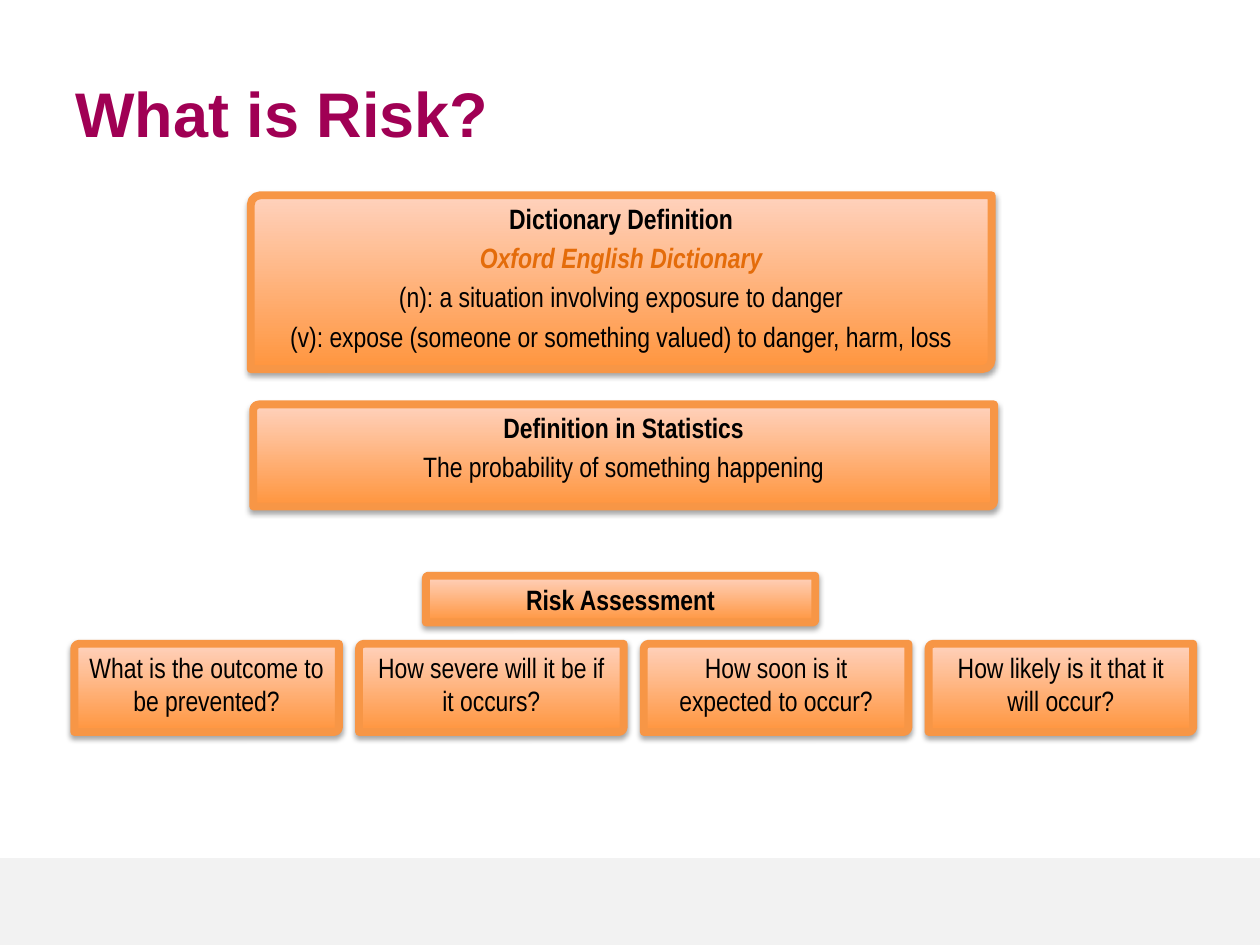
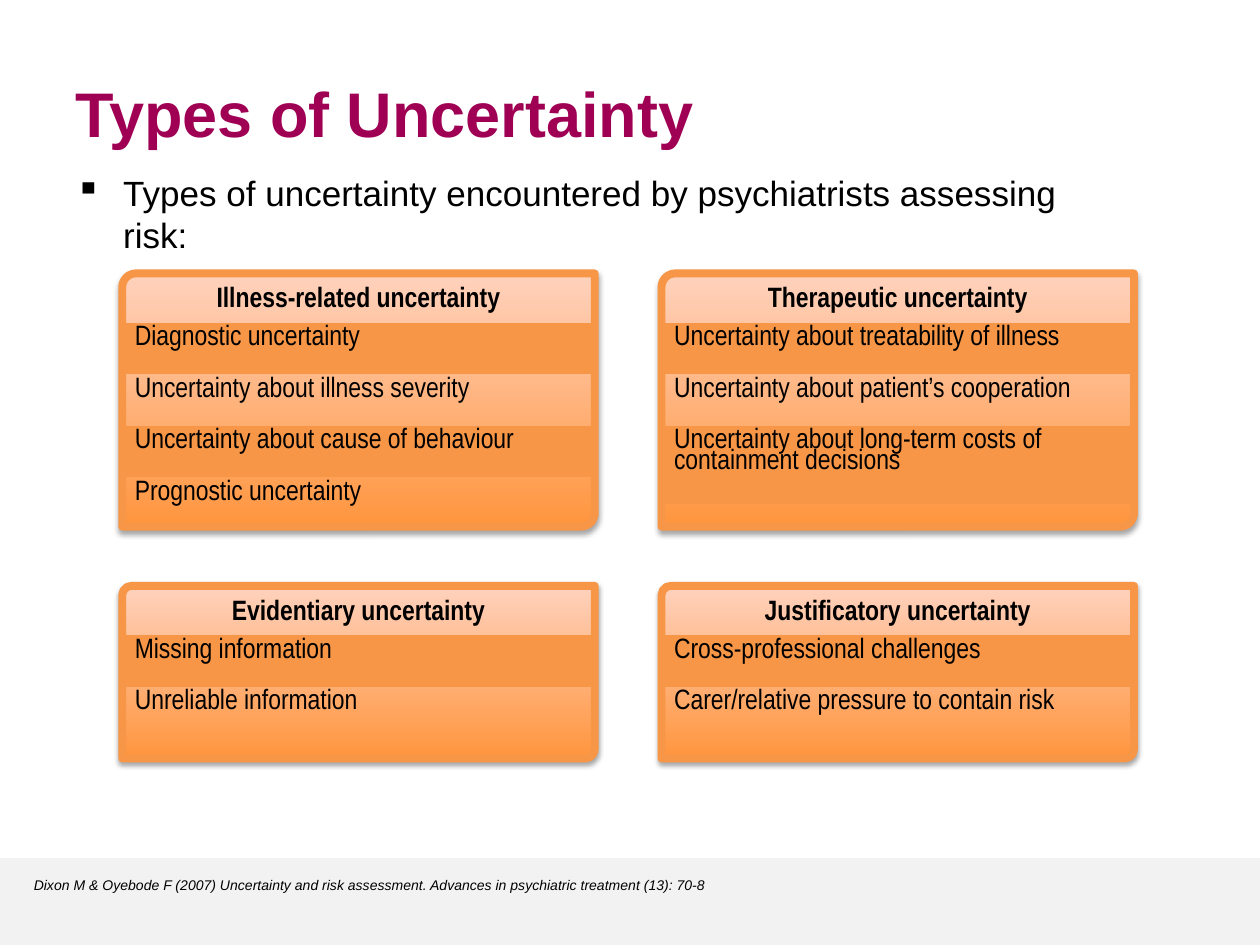
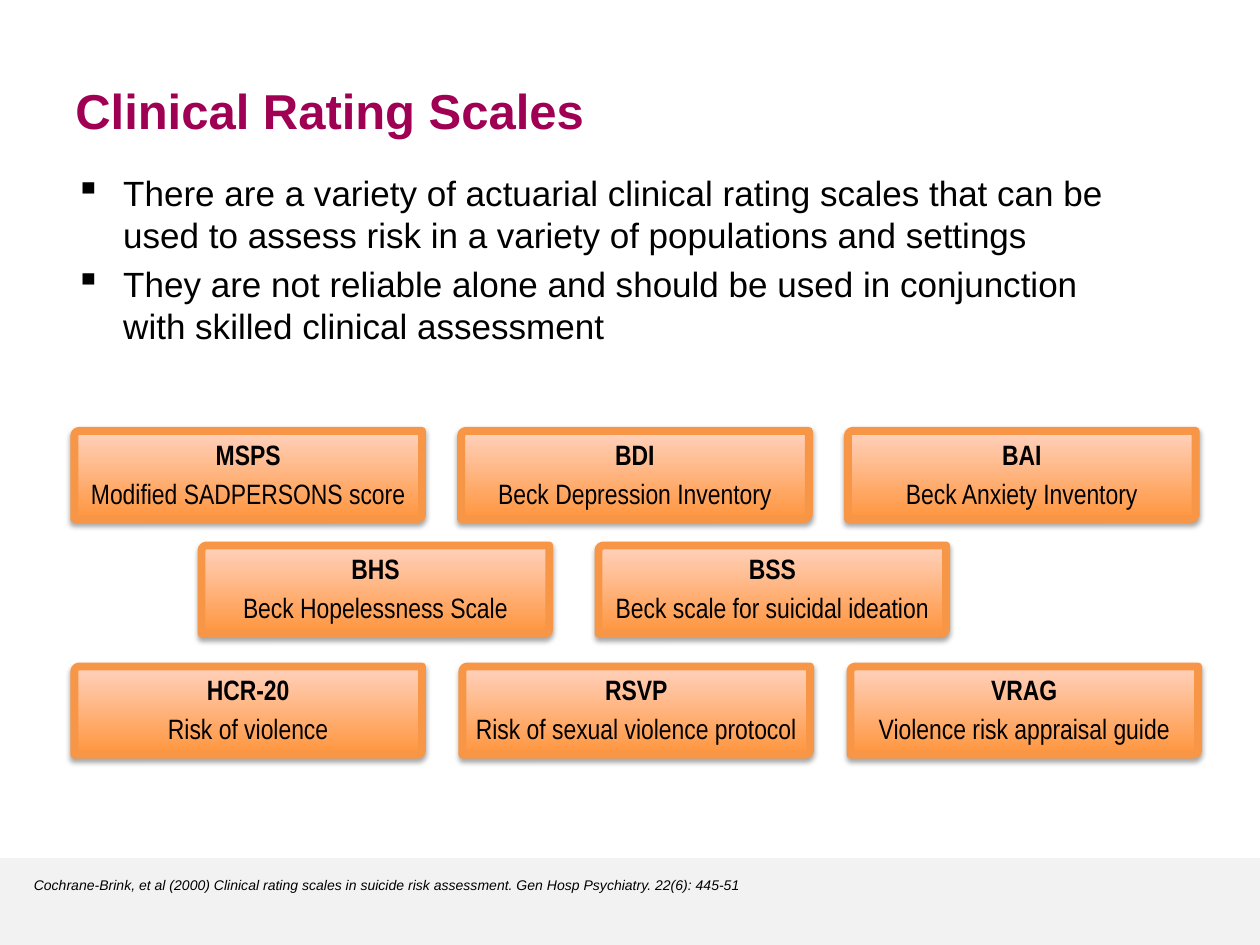
from lxml import etree
from pptx import Presentation
from pptx.dml.color import RGBColor
from pptx.enum.shapes import MSO_SHAPE
from pptx.enum.text import MSO_ANCHOR, PP_ALIGN
from pptx.oxml.ns import qn
from pptx.util import Inches, Pt

RECTANGLE = MSO_SHAPE.RECTANGLE
DIAGONAL_ROUNDED = MSO_SHAPE.ROUND_2_DIAG_RECTANGLE
TOP = MSO_ANCHOR.TOP
LEFT, CENTER = PP_ALIGN.LEFT, PP_ALIGN.CENTER

COLORS = {
    "title": "A00054",
    "text": "000000",
    "source": "E46C0A",
    "band": "F2F2F2",
    "edge": "F79646",
    "panel_bottom": "FF953E",
    "panel_top": "FFD2BD",
    "shadow": "000000",
}
HEADING_FONT, PANEL_FONT = "Arial", "Arial Narrow"
CORNER = 0.054
ROW_HEIGHT = 0.41
HEADING_HEIGHT = 0.39
NO_GRID_STYLE = "{2D5ABB26-0587-4C30-8999-92F81FD0307C}"


def color(name):
    return RGBColor.from_string(COLORS[name])


def write(frame, lines, size=16, font=PANEL_FONT, ink="text", bold=False,
          italic=False, align=LEFT, bullet=None, spacing=None):
    frame.word_wrap = True
    frame.vertical_anchor = TOP
    for index, line in enumerate(lines):
        text, changes = line if isinstance(line, tuple) else (line, {})
        look = {"ink": ink, "bold": bold, "italic": italic, **changes}
        paragraph = frame.paragraphs[0] if index == 0 else frame.add_paragraph()
        paragraph.alignment = align
        if index:
            paragraph.space_before = Pt(0.2 * size)
        if spacing:
            paragraph.line_spacing = spacing
        if bullet:
            properties = paragraph._p.get_or_add_pPr()
            properties.set("marL", str(Inches(0.38)))
            properties.set("indent", str(-Inches(0.38)))
            etree.SubElement(properties, qn("a:buChar"), char=bullet)
        run = paragraph.add_run()
        run.text = text
        run.font.name = font
        run.font.size = Pt(size)
        run.font.bold = look["bold"]
        run.font.italic = look["italic"]
        run.font.color.rgb = color(look["ink"])


def add_text(slide, left, top, width, height, lines, **look):
    box = slide.shapes.add_textbox(Inches(left), Inches(top), Inches(width), Inches(height))
    write(box.text_frame, lines, **look)


def add_panel(slide, left, top, width, height, lines):
    panel = slide.shapes.add_shape(
        DIAGONAL_ROUNDED, Inches(left), Inches(top), Inches(width), Inches(height))
    panel.adjustments[0] = CORNER
    panel.adjustments[1] = 0
    panel.fill.gradient()
    panel.fill.gradient_angle = 90
    for stop, name in zip(panel.fill.gradient_stops, ("panel_bottom", "panel_top")):
        stop.color.rgb = color(name)
    panel.line.color.rgb = color("edge")
    panel.line.width = Pt(4.5)
    add_shadow(panel)
    corner_inset = 0.29 * CORNER * min(width, height)
    frame = panel.text_frame
    frame.margin_left = frame.margin_right = Inches(0.1 - corner_inset)
    frame.margin_top = frame.margin_bottom = Inches(0.05 - corner_inset)
    write(frame, lines, align=CENTER)


def add_shadow(panel):
    panel.shadow.inherit = False
    effects = panel._element.spPr.find(qn("a:effectLst"))
    outer = etree.SubElement(effects, qn("a:outerShdw"), blurRad=str(Pt(3.1)),
                             dist=str(Pt(1.8)), dir="5400000", rotWithShape="0")
    tone = etree.SubElement(outer, qn("a:srgbClr"), val=COLORS["shadow"])
    etree.SubElement(tone, qn("a:alpha"), val="35000")


def add_uncertainty(slide, left, top, height, heading, examples, last_row=ROW_HEIGHT):
    width = 3.75
    add_panel(slide, left, top, width, height, [(heading, {"bold": True})])
    heights = [ROW_HEIGHT] * (len(examples) - 1) + [last_row]
    table = slide.shapes.add_table(
        len(examples), 1, Inches(left), Inches(top + HEADING_HEIGHT),
        Inches(width), Inches(sum(heights))).table
    table.first_row = table.horz_banding = False
    table._tbl.tblPr.find(qn("a:tableStyleId")).text = NO_GRID_STYLE
    for index, (example, row_height) in enumerate(zip(examples, heights)):
        table.rows[index].height = Inches(row_height)
        cell = table.cell(index, 0)
        if index % 2:
            cell.fill.background()
        else:
            cell.fill.solid()
            cell.fill.fore_color.rgb = color("edge")
        write(cell.text_frame, [example], spacing=0.8)


def add_bullets(slide, lines):
    add_text(slide, 0.5, 1.31, 8.57, 0.65, lines, size=20, font=HEADING_FONT, bullet="▪")


def add_slide(deck, title, title_top=0.54, title_size=36, citation=None):
    slide = deck.slides.add_slide(deck.slide_layouts[6])
    band = slide.shapes.add_shape(RECTANGLE, 0, Inches(6.81), Inches(10), Inches(0.69))
    band.shadow.inherit = False
    band.fill.solid()
    band.fill.fore_color.rgb = color("band")
    band.line.fill.background()
    add_text(slide, 0.5, title_top, 8.5, 0.74, [title], size=title_size,
             font=HEADING_FONT, ink="title", bold=True)
    if citation:
        add_text(slide, 0.17, 6.91, 8.36, 0.24, [citation], size=8,
                 font=HEADING_FONT, italic=True)
    return slide


def build_risk(deck):
    slide = add_slide(deck, "What is Risk?")
    add_panel(slide, 1.99, 1.55, 5.88, 1.38, [
        ("Dictionary Definition", {"bold": True}),
        ("Oxford English Dictionary", {"bold": True, "italic": True, "ink": "source"}),
        "(n): a situation involving exposure to danger",
        "(v): expose (someone or something valued) to danger, harm, loss",
    ])
    add_panel(slide, 2.01, 3.21, 5.88, 0.81, [
        ("Definition in Statistics", {"bold": True}),
        "The probability of something happening",
    ])
    add_panel(slide, 3.38, 4.57, 3.09, 0.37, [("Risk Assessment", {"bold": True})])
    questions = [
        "What is the outcome to be prevented?",
        "How severe will it be if it occurs?",
        "How soon is it expected to occur?",
        "How likely is it that it will occur?",
    ]
    for index, question in enumerate(questions):
        add_panel(slide, 0.59 + 2.26 * index, 5.11, 2.1, 0.7, [question])


def build_uncertainty(deck):
    slide = add_slide(
        deck, "Types of Uncertainty",
        citation="Dixon M & Oyebode F (2007) Uncertainty and risk assessment. "
                 "Advances in psychiatric treatment (13): 70-8")
    add_bullets(slide, ["Types of uncertainty encountered by psychiatrists assessing risk:"])
    left, right = 0.97, 5.25
    upper, lower = (2.17, 2.01), (4.65, 1.37)
    add_uncertainty(slide, left, *upper, "Illness-related uncertainty", [
        "Diagnostic uncertainty",
        "Uncertainty about illness severity",
        "Uncertainty about cause of behaviour",
        "Prognostic uncertainty",
    ])
    add_uncertainty(slide, right, *upper, "Therapeutic uncertainty", [
        "Uncertainty about treatability of illness",
        "Uncertainty about patient’s cooperation",
        "Uncertainty about long-term costs of containment decisions",
    ], last_row=0.62)
    add_uncertainty(slide, left, *lower, "Evidentiary uncertainty", [
        "Missing information",
        "Unreliable information",
    ])
    add_uncertainty(slide, right, *lower, "Justificatory uncertainty", [
        "Cross-professional challenges",
        "Carer/relative pressure to contain risk",
    ])


def build_scales(deck):
    slide = add_slide(
        deck, "Clinical Rating Scales", title_top=0.59, title_size=28,
        citation="Cochrane-Brink, et al (2000) Clinical rating scales in suicide risk "
                 "assessment. Gen Hosp Psychiatry. 22(6): 445-51")
    add_bullets(slide, [
        "There are a variety of actuarial clinical rating scales that can be used "
        "to assess risk in a variety of populations and settings",
        "They are not reliable alone and should be used in conjunction "
        "with skilled clinical assessment",
    ])
    scale_rows = [
        (0.59, 3.07, 3.42, [("MSPS", "Modified SADPERSONS score"),
                            ("BDI", "Beck Depression Inventory"),
                            ("BAI", "Beck Anxiety Inventory")]),
        (1.6, 3.15, 4.33, [("BHS", "Beck Hopelessness Scale"),
                           ("BSS", "Beck scale for suicidal ideation")]),
        (0.59, 3.08, 5.29, [("HCR-20", "Risk of violence"),
                            ("RSVP", "Risk of sexual violence protocol"),
                            ("VRAG", "Violence risk appraisal guide")]),
    ]
    for left, step, top, scales in scale_rows:
        for index, (acronym, meaning) in enumerate(scales):
            add_panel(slide, left + step * index, top, 2.76, 0.7,
                      [(acronym, {"bold": True}), meaning])


def main():
    deck = Presentation()
    deck.slide_width, deck.slide_height = Inches(10), Inches(7.5)
    build_risk(deck)
    build_uncertainty(deck)
    build_scales(deck)
    deck.save("out.pptx")


if __name__ == "__main__":
    main()
